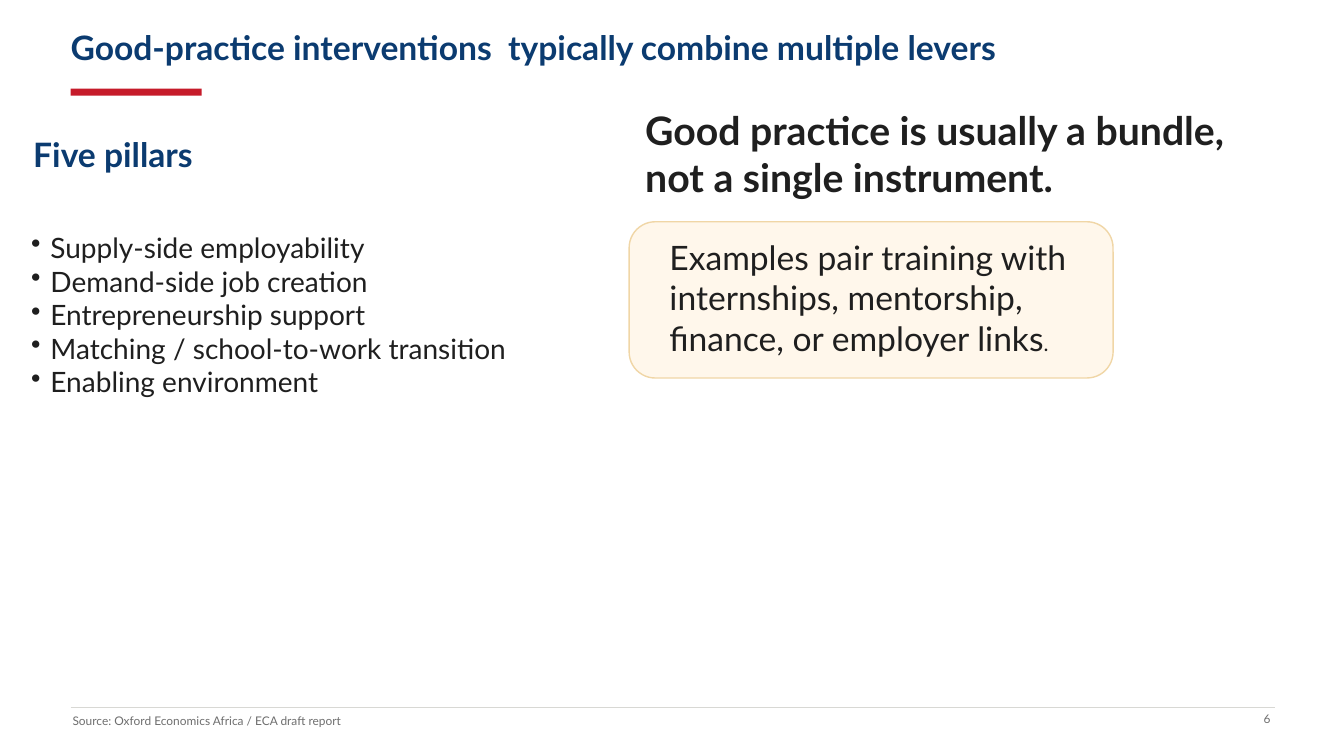
"""Build the slide on good-practice interventions and their five pillars."""
from dataclasses import dataclass

from lxml import etree
from pptx import Presentation
from pptx.dml.color import RGBColor
from pptx.enum import shapes, text
from pptx.oxml import ns
from pptx.slide import Slide
from pptx.text.text import _Paragraph as Para
from pptx.util import Inches, Pt


@dataclass(frozen=True)
class Theme:
    """Colours, type sizes and font of the slide."""
    font: str = "Lato"
    navy: str = "0B3B70"
    red: str = "C61B2A"
    ink: str = "1F1F1F"
    grey: str = "6E6E6E"
    rule: str = "D8D8D4"
    cream: str = "FFF7EB"
    sand: str = "F0D6A6"
    lead: float = 28
    head: float = 24
    body: float = 20
    stop: float = 15
    note: float = 8.5


@dataclass(frozen=True)
class Box:
    """Place and size in inches."""
    left: float
    top: float
    width: float
    height: float

    def spans(self) -> list[int]:
        """Return the four lengths for python-pptx."""
        return [Inches(n) for n in (self.left, self.top, self.width, self.height)]


@dataclass(frozen=True)
class Label:
    """A text block: its lines, place and format."""
    lines: tuple[str, ...]
    box: Box
    size: float
    color: str
    bold: bool = False
    bullet: bool = False
    right: bool = False
    end: str = ""


THEME = Theme()
MARGIN = 0.7
PILLARS = (
    "Supply-side employability",
    "Demand-side job creation",
    "Entrepreneurship support",
    "Matching / school-to-work transition",
    "Enabling environment",
)
LABELS = (
    Label(("Good-practice interventions  typically combine multiple levers",),
          Box(MARGIN, 0.35, 10.95, 0.24), THEME.head, THEME.navy, bold=True),
    Label(("Five pillars",), Box(0.33, 1.04, 3.74, 0.98),
          THEME.head, THEME.navy, bold=True),
    Label(PILLARS, Box(0.31, 0.16, 12.45, 5.92), THEME.body, THEME.ink, bullet=True),
    Label(("Good practice is usually a bundle, not a single instrument.",),
          Box(6.4, 1.14, 6.36, 0.77), THEME.lead, THEME.ink, bold=True),
    Label(("Examples pair training with internships, mentorship, finance, "
           "or employer links",),
          Box(6.64, 2.46, 4, 0.98), THEME.head, THEME.ink, end="."),
    Label(("Source: Oxford Economics Africa / ECA draft report",),
          Box(0.72, 7.05, 5.4, 0.2), THEME.note, THEME.grey),
    Label(("6",), Box(12.25, 7.03, 0.35, 0.2), THEME.note, THEME.grey, right=True),
)


def add_run(para: Para, words: str, *, size: float, color: str,
            bold: bool = False) -> None:
    """Add formatted text to a paragraph."""
    run = para.add_run()
    run.text = words
    run.font.name = THEME.font
    run.font.size = Pt(size)
    run.font.bold = bold
    run.font.color.rgb = RGBColor.from_string(color)


def add_dot(para: Para) -> None:
    """Give a paragraph a bullet with a hanging indent."""
    props = para._p.get_or_add_pPr()
    props.set("marL", str(Inches(0.19)))
    props.set("indent", str(Inches(-0.19)))
    etree.SubElement(props, ns.qn("a:buChar")).set("char", "•")


def add_label(slide: Slide, label: Label) -> None:
    """Draw a text block without insets, centred on its height."""
    frame = slide.shapes.add_textbox(*label.box.spans()).text_frame
    frame.word_wrap = True
    frame.vertical_anchor = text.MSO_ANCHOR.MIDDLE
    frame.margin_left = frame.margin_right = 0
    frame.margin_top = frame.margin_bottom = 0
    for num, line in enumerate(label.lines):
        para = frame.add_paragraph() if num else frame.paragraphs[0]
        if label.bullet:
            add_dot(para)
        if label.right:
            para.alignment = text.PP_ALIGN.RIGHT
        add_run(para, line, size=label.size, color=label.color, bold=label.bold)
    if label.end:
        add_run(para, label.end, size=THEME.stop, color=label.color)


def add_panel(slide: Slide, kind: shapes.MSO_SHAPE, box: Box, fill: str,
              edge: str = "") -> None:
    """Draw a filled shape with an optional outline."""
    panel = slide.shapes.add_shape(kind, *box.spans())
    panel.shadow.inherit = False
    panel.fill.solid()
    panel.fill.fore_color.rgb = RGBColor.from_string(fill)
    if edge:
        panel.line.color.rgb = RGBColor.from_string(edge)
        panel.line.width = Pt(1)
    else:
        panel.line.fill.background()


def add_rule(slide: Slide, left: float, right: float, top: float) -> None:
    """Draw a level hairline."""
    rule = slide.shapes.add_connector(
        shapes.MSO_CONNECTOR.STRAIGHT,
        Inches(left), Inches(top), Inches(right), Inches(top))
    rule.line.color.rgb = RGBColor.from_string(THEME.rule)
    rule.line.width = Pt(1)
    etree.SubElement(rule._element.spPr, ns.qn("a:effectLst"))


def main() -> None:
    """Build and save the slide."""
    deck = Presentation()
    deck.slide_width, deck.slide_height = Inches(13.33), Inches(7.5)
    slide = deck.slides.add_slide(deck.slide_layouts[6])
    add_panel(slide, shapes.MSO_SHAPE.RECTANGLE, Box(MARGIN, 0.88, 1.3, 0.07), THEME.red)
    add_panel(slide, shapes.MSO_SHAPE.ROUNDED_RECTANGLE, Box(6.24, 2.2, 4.8, 1.55),
              THEME.cream, THEME.sand)
    add_rule(slide, MARGIN, 12.65, 7.02)
    for label in LABELS:
        add_label(slide, label)
    deck.save("out.pptx")


if __name__ == "__main__":
    main()
